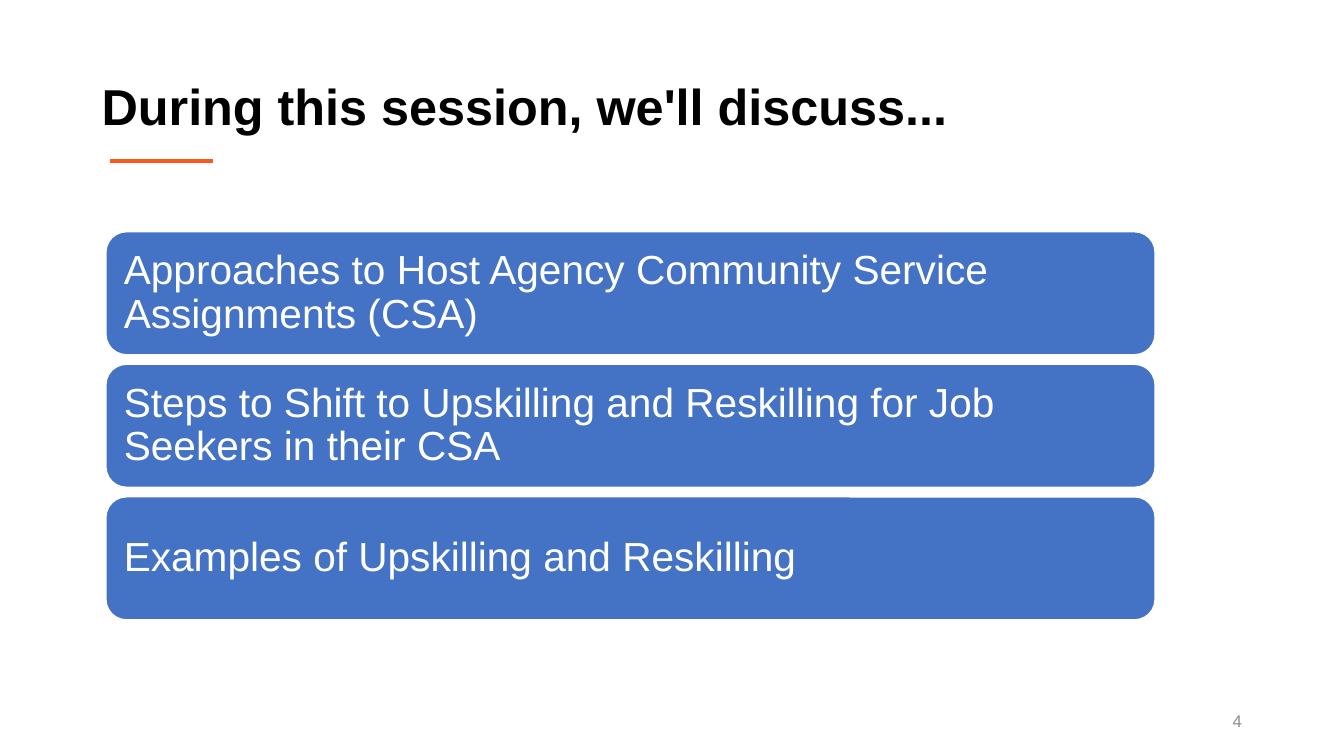
"""Build the session agenda slide."""
from pptx import Presentation
from pptx.dml.color import RGBColor
from pptx.enum.shapes import MSO_CONNECTOR, MSO_SHAPE
from pptx.enum.text import MSO_ANCHOR, PP_ALIGN
from pptx.util import Cm, Pt
from lxml import etree

STRAIGHT = MSO_CONNECTOR.STRAIGHT
ROUNDED = MSO_SHAPE.ROUNDED_RECTANGLE
MIDDLE = MSO_ANCHOR.MIDDLE
LEFT, RIGHT = PP_ALIGN.LEFT, PP_ALIGN.RIGHT

TITLE = "During this session, we'll discuss..."
TOPICS = [
    "Approaches to Host Agency Community Service Assignments (CSA)",
    "Steps to Shift to Upskilling and Reskilling for Job Seekers in their CSA",
    "Examples of Upskilling and Reskilling",
]
PAGE_NUMBER = "4"

FONT = "Arial"
COLORS = {
    "title": "000000",
    "accent": "F75A1C",
    "topic": "4472C4",
    "white": "FFFFFF",
    "page": "8C8C8C",
}
TOPIC_LEFT, TOPIC_TOP = 2.67, 5.84
TOPIC_WIDTH, TOPIC_HEIGHT, TOPIC_GAP = 26.44, 3.1, 0.24
TOPIC_INSET = Cm(0.3)
DRAWING_NS = "http://schemas.openxmlformats.org/drawingml/2006/main"


def color(name):
    return RGBColor.from_string(COLORS[name])


def write(frame, text, size, color_name, align=LEFT, bold=False, spacing=1.0):
    frame.word_wrap = True
    frame.vertical_anchor = MIDDLE
    paragraph = frame.paragraphs[0]
    paragraph.alignment = align
    paragraph.line_spacing = spacing
    run = paragraph.add_run()
    run.text = text
    run.font.name = FONT
    run.font.size = Pt(size)
    run.font.bold = bold
    run.font.color.rgb = color(color_name)


def add_accent_line(slide):
    accent = slide.shapes.add_connector(STRAIGHT, Cm(2.77), Cm(4.06), Cm(5.36), Cm(4.06))
    accent.line.color.rgb = color("accent")
    accent.line.width = Pt(3)
    etree.SubElement(accent._element.spPr, f"{{{DRAWING_NS}}}effectLst")


def add_topic(slide, index, topic):
    top = TOPIC_TOP + index * (TOPIC_HEIGHT + TOPIC_GAP)
    bar = slide.shapes.add_shape(
        ROUNDED, Cm(TOPIC_LEFT), Cm(top), Cm(TOPIC_WIDTH), Cm(TOPIC_HEIGHT))
    bar.shadow.inherit = False
    bar.fill.solid()
    bar.fill.fore_color.rgb = color("topic")
    bar.line.color.rgb = color("white")
    bar.line.width = Pt(1)
    frame = bar.text_frame
    frame.margin_left = frame.margin_right = TOPIC_INSET
    frame.margin_top = frame.margin_bottom = TOPIC_INSET
    write(frame, topic, 29, "white", spacing=0.9)


def main():
    deck = Presentation()
    deck.slide_width, deck.slide_height = Cm(33.87), Cm(19.05)
    slide = deck.slides.add_slide(deck.slide_layouts[6])
    add_accent_line(slide)
    title = slide.shapes.add_textbox(Cm(2.31), Cm(1.42), Cm(29.21), Cm(2.67))
    write(title.text_frame, TITLE, 36, "title", bold=True, spacing=0.9)
    page = slide.shapes.add_textbox(Cm(23.93), Cm(17.65), Cm(7.62), Cm(1.02))
    write(page.text_frame, PAGE_NUMBER, 12, "page", align=RIGHT)
    for index, topic in enumerate(TOPICS):
        add_topic(slide, index, topic)
    deck.save("out.pptx")


if __name__ == "__main__":
    main()
